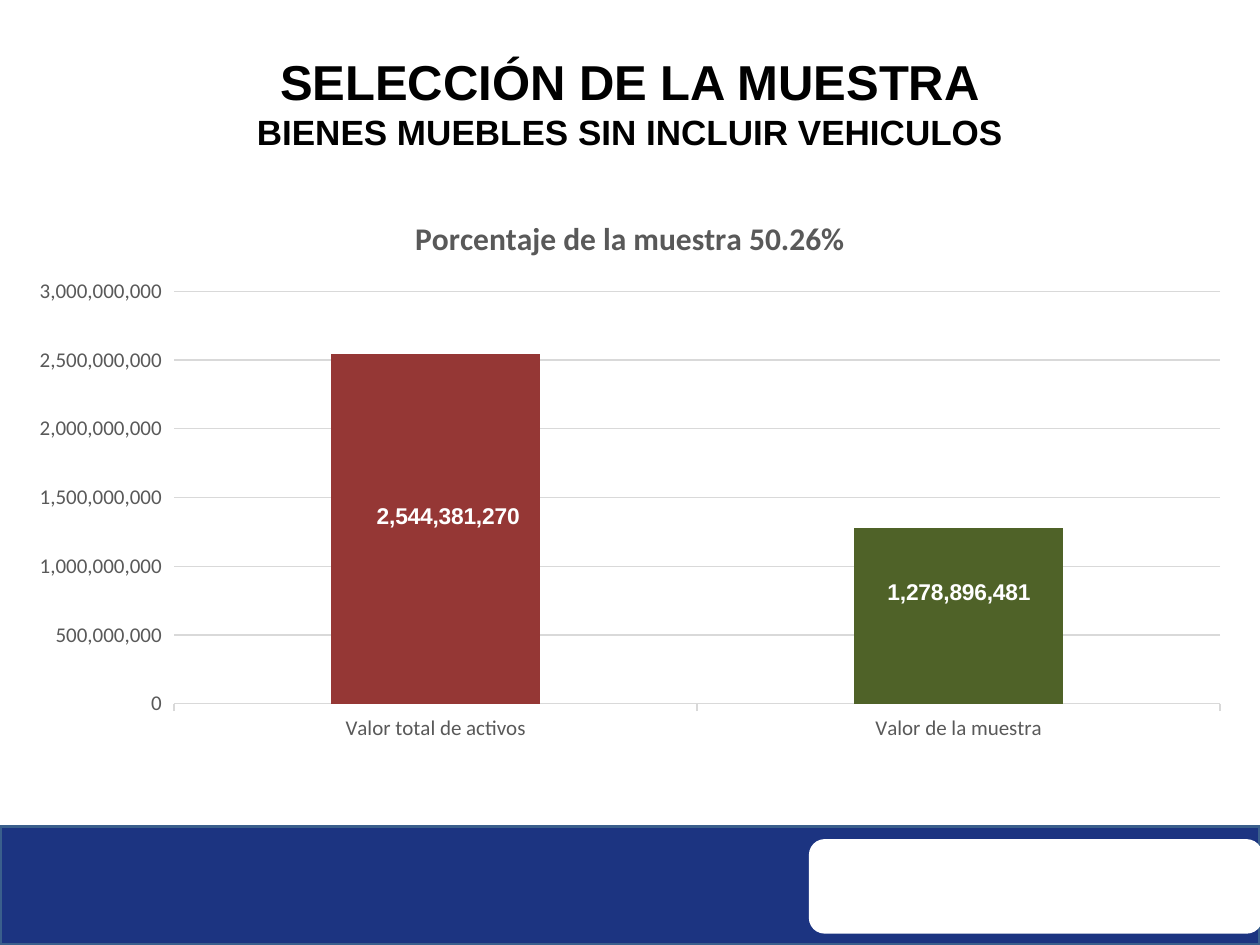
from lxml.etree import SubElement
from pptx import Presentation
from pptx.chart.data import CategoryChartData
from pptx.dml.color import RGBColor
from pptx.enum.chart import XL_CHART_TYPE, XL_LABEL_POSITION, XL_TICK_MARK
from pptx.enum.shapes import MSO_SHAPE
from pptx.enum.text import MSO_ANCHOR, PP_ALIGN
from pptx.oxml.ns import qn
from pptx.util import Inches, Pt


def rgb(color):
    """Turn a hex string into a colour."""
    return RGBColor.from_string(color)


def style_font(font, size, color, name, bold=False):
    """Set size, colour, typeface and weight of a font."""
    font.size, font.name, font.bold = Pt(size), name, bold
    font.color.rgb = rgb(color)


def add_block(s, kind, x, y, w, h, fill, line=None):
    """Add a filled shape with an optional outline."""
    sp = s.shapes.add_shape(kind, Inches(x), Inches(y), Inches(w), Inches(h))
    sp.shadow.inherit = False
    sp.fill.solid()
    sp.fill.fore_color.rgb = rgb(fill)
    if line:
        sp.line.color.rgb = rgb(line)
        sp.line.width = Pt(2)
    else:
        sp.line.fill.background()
    return sp


def add_footer(s, x, y, w, h):
    """Add the blue band with its white rounded panel."""
    add_block(s, MSO_SHAPE.RECTANGLE, x, y, w, h, "1C3481", "3A5F8C")
    add_block(s, MSO_SHAPE.ROUNDED_RECTANGLE, x + 6.42, y + 0.1, 3.6, 0.75, "FFFFFF")


def add_heading(s, x, y, w, h):
    """Add the two-line centred heading."""
    tf = add_block(s, MSO_SHAPE.RECTANGLE, x, y, w, h, "FFFFFF").text_frame
    tf.word_wrap = True
    tf.vertical_anchor = MSO_ANCHOR.TOP
    tf.text = "SELECCIÓN DE LA MUESTRA\nBIENES MUEBLES SIN INCLUIR VEHICULOS"
    for p, size in zip(tf.paragraphs, (28, 20)):
        p.alignment = PP_ALIGN.CENTER
        style_font(p.runs[0].font, size, "000000", "Arial", True)


def style_axes(chart):
    """Style both axes and the gridlines."""
    for axis in (chart.category_axis, chart.value_axis):
        style_font(axis.tick_labels.font, 12, "595959", "Calibri")
        axis.major_tick_mark = XL_TICK_MARK.OUTSIDE
    chart.category_axis.format.line.color.rgb = rgb("D9D9D9")
    chart.category_axis.format.line.width = Pt(1)
    axis = chart.value_axis
    axis.minimum_scale, axis.maximum_scale, axis.major_unit = 0, 3_000_000_000, 500_000_000
    axis.tick_labels.number_format = "#,##0"
    axis.tick_labels.number_format_is_linked = False
    axis.format.line.fill.background()
    axis.major_gridlines.format.line.color.rgb = rgb("D9D9D9")
    axis.major_gridlines.format.line.width = Pt(0.75)


def shift_label(dlbl, dx, dy):
    """Move a data label by fractions of the chart size."""
    for old in dlbl.findall(qn("c:layout")):
        dlbl.remove(old)
    layout = SubElement(dlbl, qn("c:layout"))
    dlbl.insert(1, layout)
    manual = SubElement(layout, qn("c:manualLayout"))
    for tag, value in (("c:x", dx), ("c:y", dy)):
        SubElement(manual, qn(tag)).set("val", str(value))


def add_sample_chart(s, x, y, w, h):
    """Add the column chart of total assets and sample."""
    data = CategoryChartData(number_format="#,##0")
    data.categories = ["Valor total de activos", "Valor de la muestra"]
    data.add_series("Series 1", (2544381270, 1278896481))
    chart = s.shapes.add_chart(XL_CHART_TYPE.COLUMN_CLUSTERED, Inches(x), Inches(y),
                               Inches(w), Inches(h), data).chart
    style_font(chart.font, 10, "000000", "Calibri")
    chart.has_legend = False
    tf = chart.chart_title.text_frame
    tf.text = "Porcentaje de la muestra 50.26%"
    style_font(tf.paragraphs[0].runs[0].font, 18, "595959", "Calibri", True)
    chart.chart_title.include_in_layout = False
    style_axes(chart)
    plot = chart.plots[0]
    plot.gap_width = 150
    plot.vary_by_categories = False
    series = plot.series[0]
    labels = series.data_labels
    labels.show_value = True
    labels.number_format = "#,##0"
    labels.number_format_is_linked = False
    style_font(labels.font, 13, "FFFFFF", "Arial", True)
    for i, color in enumerate(("953735", "4F6228")):
        point = series.points[i]
        point.format.fill.solid()
        point.format.fill.fore_color.rgb = rgb(color)
        style_font(point.data_label.font, 13, "FFFFFF", "Arial", True)
        point.data_label.position = XL_LABEL_POSITION.CENTER
    shifts = ((0.01, -0.02), (0, -0.04))
    for dlbl, shift in zip(plot._element.iter(qn("c:dLbl")), shifts):
        shift_label(dlbl, *shift)


def main():
    """Build and save the slide."""
    prs = Presentation()
    prs.slide_width, prs.slide_height = Inches(10), Inches(7.5)
    s = prs.slides.add_slide(prs.slide_layouts[6])
    add_footer(s, 0, 6.56, 10, 0.94)
    add_heading(s, 0, 0.36, 10, 0.91)
    add_sample_chart(s, 0.12, 1.53, 9.76, 4.44)
    prs.save("out.pptx")


if __name__ == "__main__":
    main()
